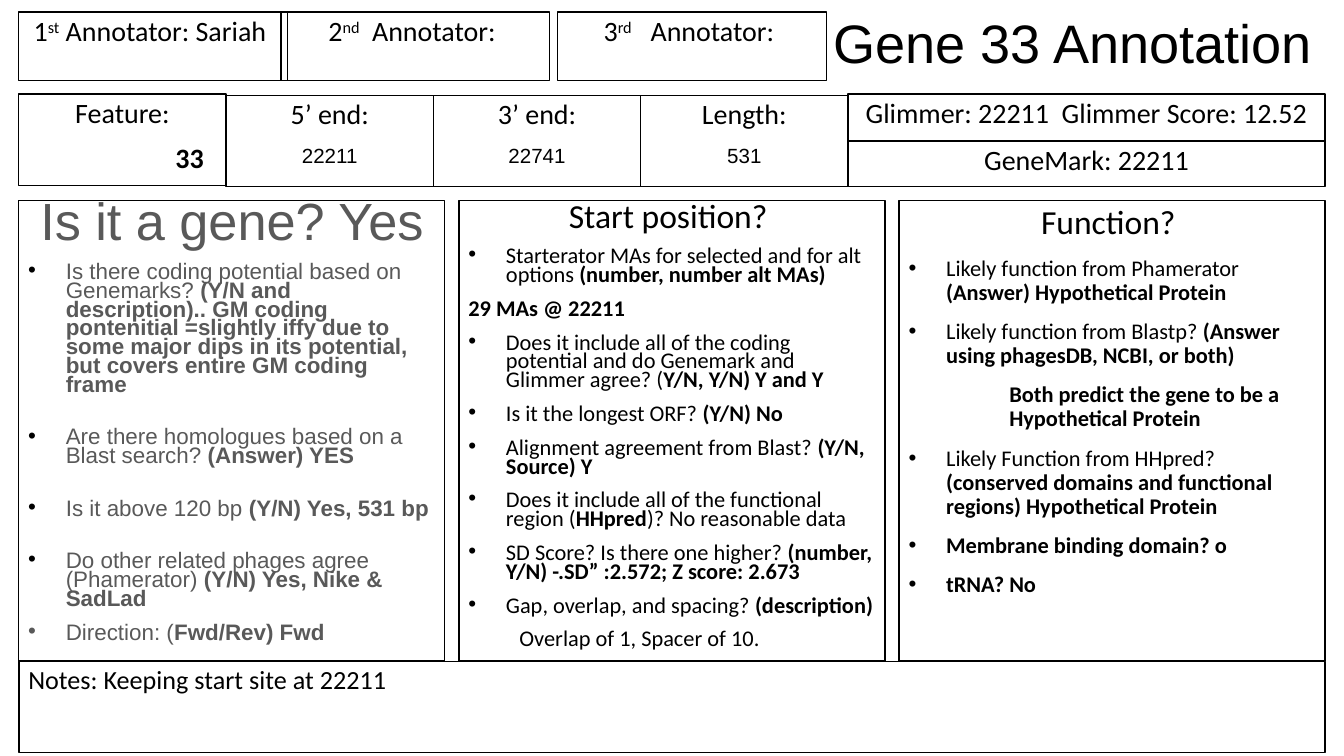
from dataclasses import dataclass

from lxml import etree
from pptx import Presentation
from pptx.dml.color import RGBColor
from pptx.enum.shapes import MSO_SHAPE
from pptx.enum.text import MSO_ANCHOR, MSO_AUTO_SIZE, PP_ALIGN
from pptx.oxml.ns import qn
from pptx.util import Inches, Pt

RECT = MSO_SHAPE.RECTANGLE
TOP, BOTTOM = MSO_ANCHOR.TOP, MSO_ANCHOR.BOTTOM
LEFT, CENTER = PP_ALIGN.LEFT, PP_ALIGN.CENTER
NO_AUTOFIT = MSO_AUTO_SIZE.NONE


@dataclass(frozen=True)
class Theme:
    """Colours, fonts and type sizes of the slide."""
    black: str = "000000"
    grey: str = "595959"
    sans: str = "Arial"
    body: str = "Calibri"
    title: float = 29
    gene: float = 28
    heading: float = 18
    label: float = 15
    notes: float = 14
    item: float = 12
    value: float = 11
    gap: float = 8
    wide_gap: float = 18
    line: float = 0.75


@dataclass(frozen=True)
class Item:
    """A list entry; text after each bar switches between plain and bold."""
    text: str
    indent: float = 0.28
    bullet: str = "000000"
    before: float = 8


T = Theme()

GENE_ITEMS = [
    Item("Is there coding potential based on Genemarks? |(Y/N and description).. GM coding "
         "pontenitial =slightly iffy due to some major dips in its potential, "
         "but covers entire GM coding frame"),
    Item("Are there homologues based on a Blast search? |(Answer) YES", before=T.wide_gap),
    Item("Is it above 120 bp |(Y/N) Yes, 531 bp", before=T.wide_gap),
    Item("Do other related phages agree (Phamerator)| (Y/N) Yes, Nike & SadLad",
         before=T.wide_gap),
    Item("Direction: (|Fwd/Rev) Fwd", bullet=T.grey),
]
START_ITEMS = [
    Item("Starterator MAs for selected and for alt options| (number, number alt MAs)"),
    Item("|29 MAs @ 22211", indent=0, bullet=""),
    Item("Does it include all of the coding potential and do Genemark and Glimmer agree? "
         "(|Y/N, Y/N) Y and Y"),
    Item("Is it the longest ORF? |(Y/N) No"),
    Item("Alignment agreement from Blast? |(Y/N, Source) Y"),
    Item("Does it include all of the functional region (|HHpred|)? No reasonable data"),
    Item("SD Score? Is there one higher? |(number, Y/N) -.SD” :2.572; Z score: 2.673"),
    Item("Gap, overlap, and spacing? |(description)"),
    Item("Overlap of 1, Spacer of 10.", indent=0.38, bullet=""),
]
FUNCTION_ITEMS = [
    Item("Likely function from Phamerator |(Answer) Hypothetical Protein"),
    Item("Likely function from Blastp? |(Answer using phagesDB, NCBI, or both)"),
    Item("|Both predict the gene to be a Hypothetical Protein", indent=0.75, bullet=""),
    Item("Likely Function from HHpred? |(conserved domains and functional regions) "
         "Hypothetical Protein"),
    Item("|Membrane binding domain? o"),
    Item("|tRNA? No"),
]
COLUMNS = [
    ("Is it a gene? Yes", T.gene, T.sans, T.grey, 0.7, GENE_ITEMS),
    ("Start position? ", T.heading, T.body, T.black, 0.7, START_ITEMS),
    ("Function? ", T.heading, T.body, T.black, 0.9, FUNCTION_ITEMS),
]
ANNOTATORS = [
    (0.14, "1", "st", " Annotator: Sariah "),
    (2.09, "2", "nd", "  Annotator: "),
    (4.15, "3", "rd", "   Annotator: "),
]
FIELDS = [
    (0.7, "Feature:", "|\t33", T.label, T.body),
    (0.71, "5’ end:", "22211", T.value, T.sans),
    (0.71, "3’ end:", "22741", T.value, T.sans),
    (0.71, "Length:", "531", T.value, T.sans),
]
CALLS = [
    (0.7, 0.35, "Glimmer: 22211  Glimmer Score: 12.52"),
    (1.05, 0.34, "GeneMark: 22211"),
]
EDGE, CALLS_X, LAST_COLUMN_X = 0.14, 6.31, 6.69
FIELD_WIDTH = (CALLS_X - EDGE) / len(FIELDS)
COLUMN_STEP = (LAST_COLUMN_X - EDGE) / (len(COLUMNS) - 1)


def set_frame(tf, anchor):
    """Apply the common margins, wrapping and anchor to a text frame."""
    tf.word_wrap = True
    tf.auto_size = NO_AUTOFIT
    tf.vertical_anchor = anchor
    tf.margin_left = tf.margin_right = Inches(0.07)
    tf.margin_top = tf.margin_bottom = Inches(0.04)


def add_box(s, x, y, w, h):
    """Add an outlined rectangle and return its text frame."""
    sp = s.shapes.add_shape(RECT, Inches(x), Inches(y), Inches(w), Inches(h))
    sp.shadow.inherit = False
    sp.fill.background()
    sp.line.color.rgb = RGBColor.from_string(T.black)
    sp.line.width = Pt(T.line)
    set_frame(sp.text_frame, TOP)
    return sp.text_frame


def write(p, text, size, font=T.body, color=T.black, align=CENTER, spacing=0.9, before=0):
    """Fill a paragraph, turning bold on and off at each bar."""
    p.alignment = align
    p.line_spacing = spacing
    p.space_before = Pt(before)
    p.font.size = Pt(size)
    p.font.name = font
    p.font.color.rgb = RGBColor.from_string(color)
    p._p.get_or_add_pPr().set("defTabSz", str(Inches(1)))
    for i, part in enumerate(text.split("|")):
        if part:
            r = p.add_run()
            r.text = part
            r.font.bold = i % 2 == 1
    return p


def set_bullet(p, item):
    """Indent a paragraph and give it a hanging bullet if it has one."""
    pPr = p._p.get_or_add_pPr()
    pPr.set("marL", str(Inches(item.indent)))
    if not item.bullet:
        return
    pPr.set("indent", str(-Inches(item.indent)))
    clr = etree.Element(qn("a:buClr"))
    etree.SubElement(clr, qn("a:srgbClr"), val=item.bullet)
    font = etree.Element(qn("a:buFont"), typeface=T.sans)
    char = etree.Element(qn("a:buChar"), char="•")
    defaults = pPr.find(qn("a:defRPr"))
    for el in (clr, font, char):
        defaults.addprevious(el)


def add_title(s, text):
    """Place and format the title placeholder."""
    sp = s.shapes.title
    sp.left, sp.top, sp.width, sp.height = (Inches(v) for v in (6.11, 0.06, 3.75, 0.54))
    set_frame(sp.text_frame, BOTTOM)
    write(sp.text_frame.paragraphs[0], text, T.title, T.sans)


def add_annotator(s, x, number, suffix, label):
    """Add an annotator box with a raised ordinal suffix."""
    p = write(add_box(s, x, 0.09, 2, 0.51).paragraphs[0], number, T.label)
    r = p.add_run()
    r.text = suffix
    r._r.get_or_add_rPr().set("baseline", "30000")
    p.add_run().text = label


def add_field(s, x, y, label, value, size, font):
    """Add a labelled value box."""
    tf = add_box(s, x, y, FIELD_WIDTH, 0.68)
    write(tf.paragraphs[0], label, T.label)
    write(tf.add_paragraph(), value, size, font, before=T.gap)


def add_column(s, x, heading, size, font, color, spacing, items):
    """Add a question column with its heading and list."""
    tf = add_box(s, x, 1.49, 3.17, 3.43)
    write(tf.paragraphs[0], heading, size, font, color, spacing=spacing)
    for item in items:
        p = write(tf.add_paragraph(), item.text, T.item, font, color, LEFT, spacing, item.before)
        set_bullet(p, item)


def main():
    """Build the gene annotation slide."""
    prs = Presentation()
    prs.slide_width, prs.slide_height = Inches(10), Inches(10) * 9 // 16
    s = prs.slides.add_slide(prs.slide_layouts[5])
    add_title(s, "Gene 33 Annotation")
    for i, column in enumerate(COLUMNS):
        add_column(s, EDGE + i * COLUMN_STEP, *column)
    for i, field in enumerate(FIELDS):
        add_field(s, EDGE + i * FIELD_WIDTH, *field)
    for y, h, text in CALLS:
        write(add_box(s, CALLS_X, y, 3.55, h).paragraphs[0], text, T.label)
    for annotator in ANNOTATORS:
        add_annotator(s, *annotator)
    notes = add_box(s, EDGE, 4.92, 9.72, 0.68)
    write(notes.paragraphs[0], "Notes: Keeping start site at 22211", T.notes, align=LEFT)
    prs.save("out.pptx")


if __name__ == "__main__":
    main()
